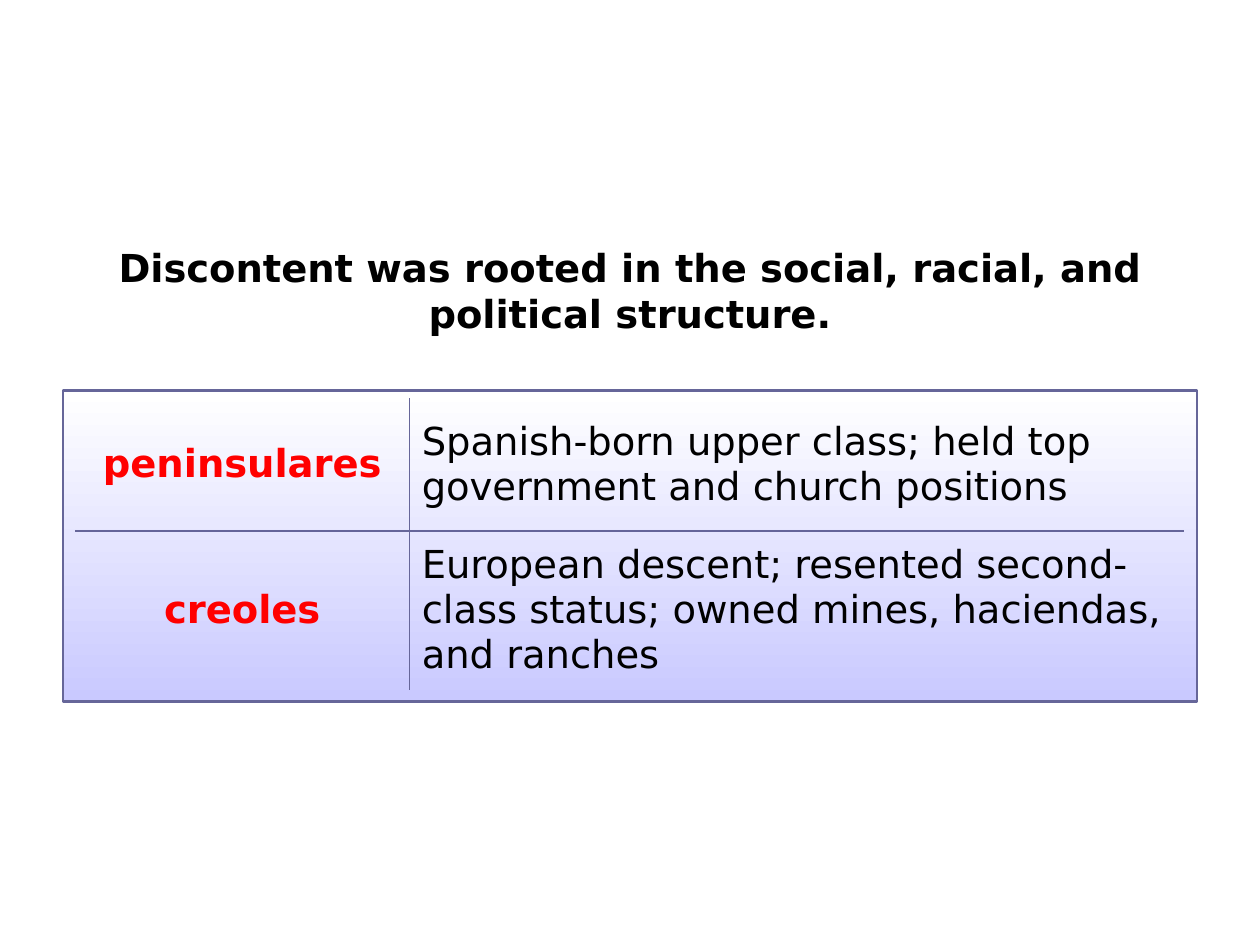
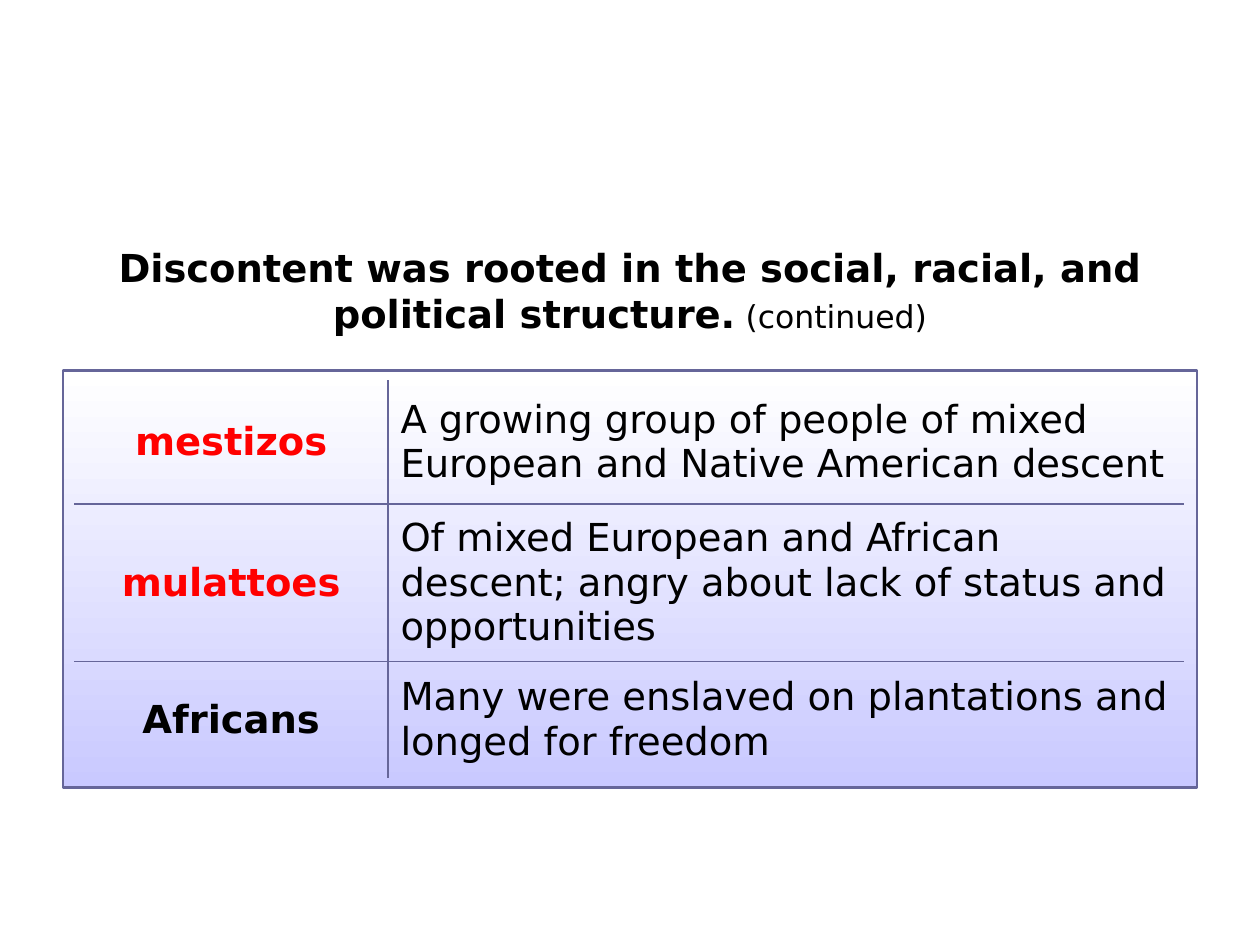
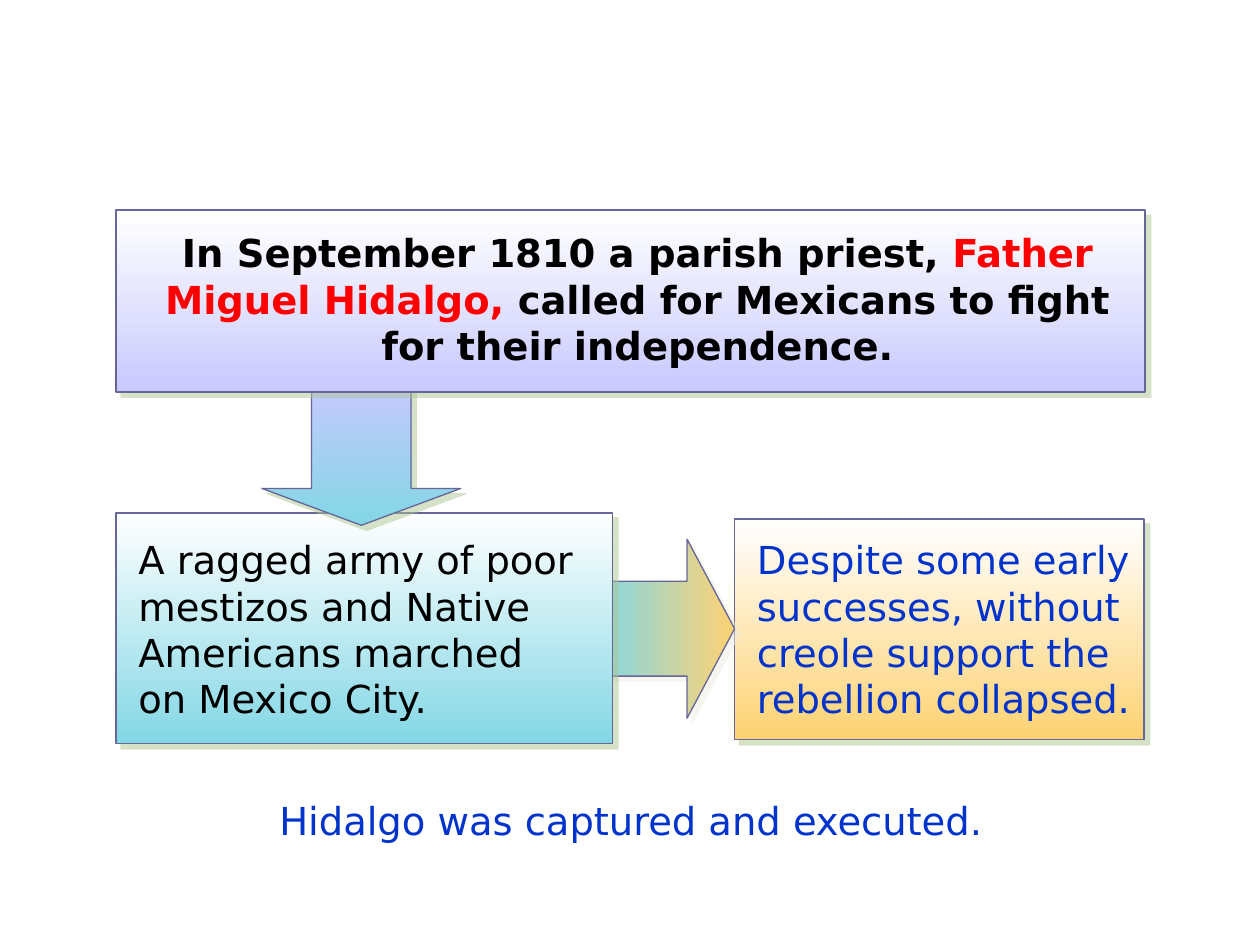
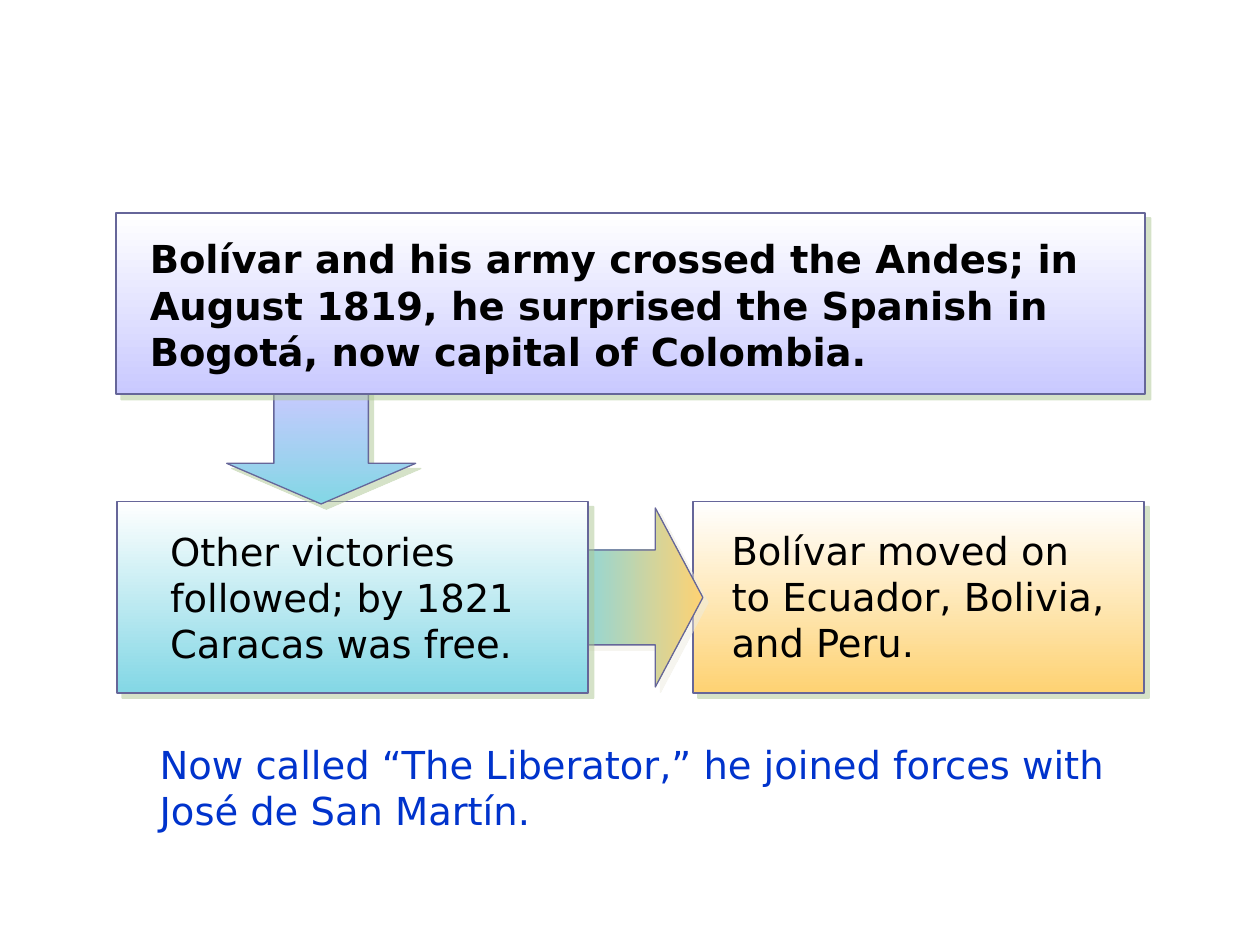
from dataclasses import dataclass

from lxml import etree
from pptx import Presentation
from pptx import util as u
from pptx.dml.color import RGBColor
from pptx.enum import shapes, text
from pptx.oxml.ns import qn


@dataclass(frozen=True)
class Theme:
    font: str = "DejaVu Sans"
    size: float = 22
    small: float = 18
    ink: str = "000000"
    red: str = "FF0000"
    blue: str = "0033CC"
    edge: str = "666699"
    white: str = "FFFFFF"
    lilac: str = "C9C9FF"
    aqua: str = "83D7E5"
    gold: str = "FED273"
    green: str = "ADC793"
    cream: str = "EEECE1"


T = Theme()
RECT = shapes.MSO_SHAPE.RECTANGLE
DOWN = shapes.MSO_SHAPE.DOWN_ARROW
RIGHT = shapes.MSO_SHAPE.RIGHT_ARROW
MID = text.PP_ALIGN.CENTER
LEFT = text.PP_ALIGN.LEFT

# Content: lengths in cm, boxes as left, top, width, height
TITLE = "Discontent was rooted in the social, racial, and political structure."

GRIDS = [
    dict(
        title=[(TITLE, {})],
        panel=(7.87, 6.27), at=(1.52, 8.03), cols=(6.73, 15.62),
        rows=[
            (2.67, "peninsulares", T.red,
             "Spanish-born upper class; held top government and church positions"),
            (3.2, "creoles", T.red,
             "European descent; resented second-class status; "
             "owned mines, haciendas, and ranches"),
        ]),
    dict(
        title=[(TITLE, {}), (" (continued)", dict(size=T.small, bold=False))],
        panel=(7.47, 8.41), at=(1.5, 7.67), cols=(6.32, 16.05),
        rows=[
            (2.49, "mestizos", T.red,
             "A growing group of people of mixed European and Native American descent"),
            (3.18, "mulattoes", T.red,
             "Of mixed European and African descent; "
             "angry about lack of status and opportunities"),
            (2.34, "Africans", T.ink,
             "Many were enslaved on plantations and longed for freedom"),
        ]),
]

# Each part of a flow has its shape box, then its text box and runs
FLOWS = [
    dict(
        end=((14.81, 10.46, 8.26, 4.45), (15.01, 10.69, 8.05, 3.99), T.blue,
             "Despite some early successes, without creole support "
             "the rebellion collapsed."),
        right=(12.07, 10.87),
        mid=((2.34, 10.34, 10.01, 4.65), (2.54, 10.69, 9.68, 3.99), T.ink,
             "A ragged army of poor mestizos and Native Americans marched \n"
             "on Mexico City."),
        down=((5.28, 7.62, 4.01, 2.97), 0.25),
        head=(4.24, (2.69, 4.5, 20.32, 3.05), MID, [
            ("In September 1810 a parish priest, ", {}),
            ("Father Miguel Hidalgo,", dict(color=T.red)),
            (" called for Mexicans to fight for their independence.", {})]),
        foot=((2.34, 15.95, 20.75, 1.19), MID,
              "Hidalgo was captured and executed.")),
    dict(
        end=((13.97, 10.11, 9.09, 3.86), (14.5, 10.49, 8.2, 3.05), T.ink,
             "Bolívar moved on to Ecuador, Bolivia, and Peru."),
        right=(11.43, 10.24),
        mid=((2.36, 10.11, 9.5, 3.86), (3.18, 10.52, 8.46, 3.07), T.ink,
             "Other victories followed; by 1821 Caracas was free."),
        down=((4.57, 7.82, 3.81, 2.34), 0.35),
        head=(4.29, (2.77, 4.62, 19.81, 3.07), LEFT, [
            ("Bolívar and his army crossed the Andes; in August 1819, he "
             "surprised the Spanish in Bogotá, now capital of Colombia.", {})]),
        foot=((2.97, 14.81, 20.96, 2.67), LEFT,
              "Now called “The Liberator,” he joined forces with "
              "José de San Martín.")),
]


def cm(box):
    return [u.Cm(n) for n in box]


def write(frame, runs, align=LEFT, **base):
    """Put one paragraph in a frame; each run may override the base format."""
    para = frame.paragraphs[0]
    para.alignment = align
    if isinstance(runs, str):
        runs = [(runs, {})]
    for words, own in runs:
        fmt = dict(size=T.size, color=T.ink, bold=False) | base | own
        for i, line in enumerate(words.split("\n")):
            if i:
                para.add_line_break()
            run = para.add_run()
            run.text = line
            run.font.name = T.font
            run.font.size = u.Pt(fmt["size"])
            run.font.bold = fmt["bold"]
            run.font.color.rgb = RGBColor.from_string(fmt["color"])


def label(slide, box, runs, **fmt):
    frame = slide.shapes.add_textbox(*cm(box)).text_frame
    frame.word_wrap = True
    frame.auto_size = text.MSO_AUTO_SIZE.SHAPE_TO_FIT_TEXT
    write(frame, runs, **fmt)


def block(slide, kind, box, fade, width=1, turn=270, shade=T.green, adj=()):
    """Draw a shape with a two-colour fade and, if asked, a hard shadow."""
    shape = slide.shapes.add_shape(kind, *cm(box))
    for i, value in enumerate(adj):
        shape.adjustments[i] = value
    shape.fill.gradient()
    shape.fill.gradient_angle = turn
    for stop, color in zip(shape.fill.gradient_stops, fade):
        stop.color.rgb = RGBColor.from_string(color)
    shape.line.color.rgb = RGBColor.from_string(T.edge)
    shape.line.width = u.Pt(width)
    shape.shadow.inherit = False
    if shade:
        effect = shape.element.spPr.find(qn("a:effectLst"))
        cast = etree.SubElement(
            effect, qn("a:outerShdw"), blurRad="0", dist=str(u.Pt(4.2)),
            dir="2700000", algn="ctr", rotWithShape="0")
        tint = etree.SubElement(cast, qn("a:srgbClr"), val=shade)
        etree.SubElement(tint, qn("a:alpha"), val="50000")


def rule(cell, sides):
    """Draw the named sides of a cell and clear the others."""
    props = cell._tc.get_or_add_tcPr()
    for i, side in enumerate("LRTB"):
        line = etree.Element(qn("a:ln" + side), w=str(u.Pt(1)))
        if side in sides:
            fill = etree.SubElement(line, qn("a:solidFill"))
            etree.SubElement(fill, qn("a:srgbClr"), val=T.edge)
        else:
            etree.SubElement(line, qn("a:noFill"))
        props.insert(i, line)


def grid(slide, data):
    top, height = data["panel"]
    block(slide, RECT, (1.27, top, 22.86, height), (T.white, T.lilac),
          width=1.5, shade=None)
    label(slide, (1.27, 4.8, 22.86, 2.11), data["title"], align=MID, bold=True)

    # Table over the panel, ruled only between cells
    rows, cols = data["rows"], data["cols"]
    size = sum(cols), sum(row[0] for row in rows)
    table = slide.shapes.add_table(
        len(rows), len(cols), *cm(data["at"] + size)).table
    table.first_row = table.horz_banding = False
    for col, width in zip(table.columns, cols):
        col.width = u.Cm(width)
    for r, (tall, name, color, note) in enumerate(rows):
        table.rows[r].height = u.Cm(tall)
        sides = ("T" if r else "") + ("B" if r < len(rows) - 1 else "")
        for c in range(len(cols)):
            cell = table.cell(r, c)
            cell.fill.background()
            cell.vertical_anchor = text.MSO_ANCHOR.MIDDLE
            rule(cell, sides + "RL"[c])
        write(table.cell(r, 0).text_frame, name, align=MID, color=color, bold=True)
        write(table.cell(r, 1).text_frame, note)


def flow(slide, data):
    # Outcome, with the arrow that leads to it
    box, inner, color, words = data["end"]
    block(slide, RECT, box, (T.white, T.gold))
    label(slide, inner, words, color=color)
    block(slide, RIGHT, data["right"] + (2.74, 3.61), (T.aqua, T.gold),
          width=0.75, turn=0, shade=T.cream, adj=(0.53, 0.35))

    # Middle step, with the arrow from the heading
    box, inner, color, words = data["mid"]
    block(slide, RECT, box, (T.white, T.aqua))
    label(slide, inner, words, color=color)
    box, point = data["down"]
    block(slide, DOWN, box, (T.lilac, T.aqua), width=0.75, adj=(0.5, point))

    # Heading and closing line
    top, inner, align, runs = data["head"]
    block(slide, RECT, (2.34, top, 20.75, 3.66), (T.white, T.lilac))
    label(slide, inner, runs, align=align, bold=True)
    box, align, words = data["foot"]
    label(slide, box, words, align=align, color=T.blue)


def main():
    deck = Presentation()
    deck.slide_width, deck.slide_height = u.Cm(25.4), u.Cm(19.05)
    for draw, items in ((grid, GRIDS), (flow, FLOWS)):
        for data in items:
            draw(deck.slides.add_slide(deck.slide_layouts[6]), data)
    deck.save("out.pptx")


if __name__ == "__main__":
    main()
